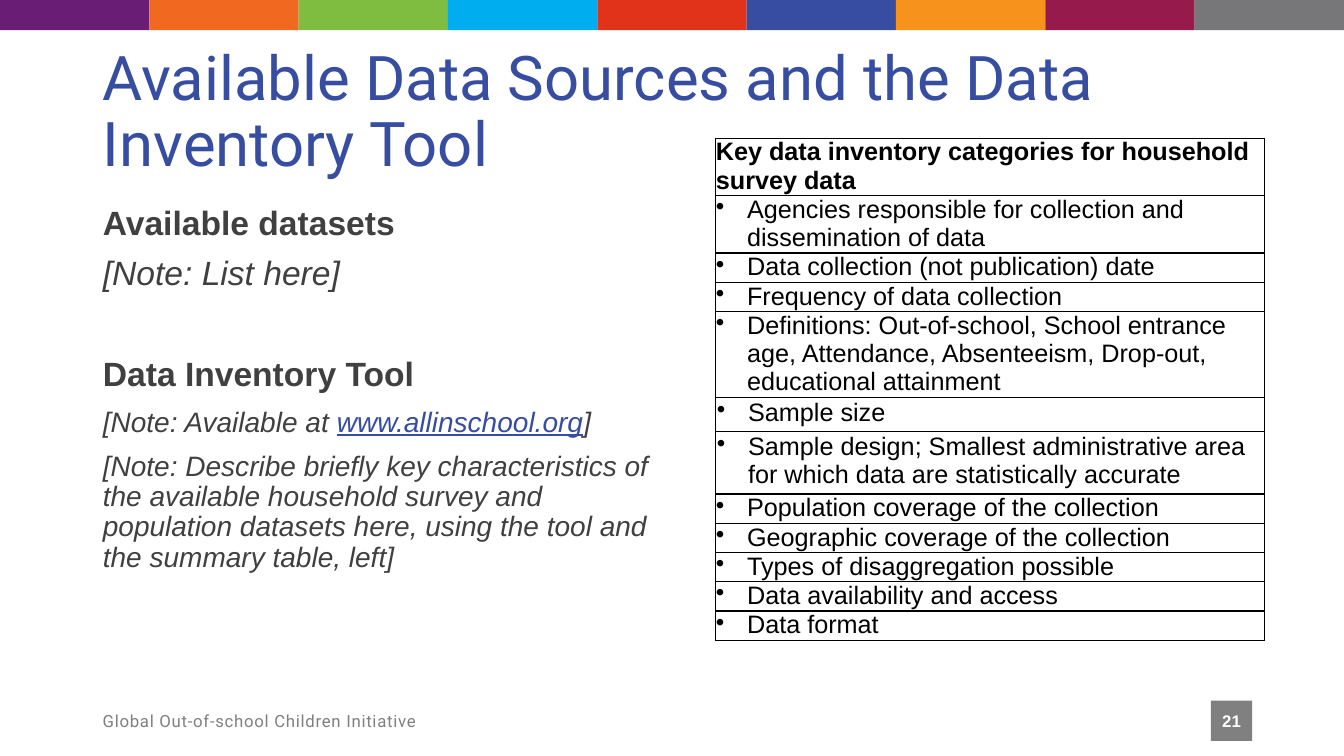
from pptx import Presentation
from pptx.dml.color import RGBColor
from pptx.enum import shapes, text
from pptx.oxml import parse_xml
from pptx.oxml.ns import nsdecls
from pptx.util import Inches, Pt

BLUE = RGBColor(0x36, 0x4D, 0xA1)
DARK = RGBColor(0x40, 0x40, 0x40)
GREY = RGBColor(0x80, 0x80, 0x80)
BLACK = RGBColor(0, 0, 0)
WHITE = RGBColor(0xFF, 0xFF, 0xFF)
BAND_COLOURS = [RGBColor.from_string(code) for code in (
    "691D74", "F16920", "7FBD41", "00AEEF", "E13319",
    "364DA1", "F7931D", "961A4B", "77777A")]

SLIDE_WIDTH, SLIDE_HEIGHT = 13.33, 7.5
LEFT = 0.92
LINE_HEIGHT = 0.28
TIGHT = (0, 0, 0, 0.01)
PADDED = (0.01, 0.01, 0.01, 0.05)

HEADING = "Key data inventory categories for household survey data"
CATEGORIES = [
    ("Agencies responsible for collection and dissemination of data", 2, TIGHT),
    ("Data collection (not publication) date", 1, TIGHT),
    ("Frequency of data collection", 1, TIGHT),
    ("Definitions: Out-of-school, School entrance age, Attendance, "
     "Absenteeism, Drop-out, educational attainment", 3, TIGHT),
    ("Sample size", 1, PADDED),
    ("Sample design; Smallest administrative area for which data are "
     "statistically accurate", 2, PADDED),
    ("Population coverage of the collection", 1, TIGHT),
    ("Geographic coverage of the collection", 1, TIGHT),
    ("Types of disaggregation possible", 1, TIGHT),
    ("Data availability and access", 1, TIGHT),
    ("Data format", 1, TIGHT),
]


def write(paragraph, words, size=18, font="Arial", colour=BLACK, bold=False,
          italic=False, underline=False, tracking=None):
    run = paragraph.add_run()
    run.text = words
    run.font.name = font
    run.font.size = Pt(size)
    run.font.color.rgb = colour
    run.font.bold = bold
    run.font.italic = italic
    run.font.underline = underline
    if tracking:
        run._r.get_or_add_rPr().set("spc", str(tracking))


def set_bullet(paragraph, indent=0, mark=None):
    properties = paragraph._p.get_or_add_pPr()
    properties.set("marL", str(Inches(indent)))
    properties.set("indent", str(-Inches(indent)))
    tag = f'a:buChar {nsdecls("a")} char="{mark}"' if mark else f'a:buNone {nsdecls("a")}'
    properties.append(parse_xml(f"<{tag}/>"))


def place(shape, left, top, width, height):
    shape.left, shape.top = Inches(left), Inches(top)
    shape.width, shape.height = Inches(width), Inches(height)


def add_block(slide, left, top, width, height, colour):
    block = slide.shapes.add_shape(
        shapes.MSO_SHAPE.RECTANGLE, Inches(left), Inches(top),
        Inches(width), Inches(height))
    block.shadow.inherit = False
    block.fill.solid()
    block.fill.fore_color.rgb = colour
    block.line.fill.background()
    return block


def add_colour_band(slide, left, top, width, height):
    step = width / len(BAND_COLOURS)
    for index, colour in enumerate(BAND_COLOURS):
        add_block(slide, left + index * step, top, step, height, colour)


def add_title(slide, left, top, width, height):
    title = slide.shapes.title
    place(title, left, top, width, height)
    frame = title.text_frame
    frame.auto_size = text.MSO_AUTO_SIZE.NONE
    frame.vertical_anchor = text.MSO_ANCHOR.MIDDLE
    heading = frame.paragraphs[0]
    heading.alignment = text.PP_ALIGN.LEFT
    heading.line_spacing = 0.9
    write(heading, "Available Data Sources and the Data Inventory Tool",
          size=44, font="Roboto", colour=BLUE)


def add_notes(slide, left, top, width, height):
    body = slide.placeholders[1]
    place(body, left, top, width, height)
    frame = body.text_frame
    frame.auto_size = text.MSO_AUTO_SIZE.NONE
    strong = dict(size=24, colour=DARK, bold=True)
    large_note = dict(size=24, colour=DARK, italic=True)
    note = dict(size=20, colour=DARK, italic=True)
    address = dict(note, colour=BLUE, underline=True)
    entries = [
        (0, [("Available datasets", strong)]),
        (10, [("[Note: List here]", large_note)]),
        (46, [("Data Inventory Tool", strong)]),
        (10, [("[Note: Available at ", note), ("www.allinschool.org", address),
              ("]", note)]),
        (10, [("[Note: Describe briefly key characteristics of the available "
               "household survey and population datasets here, using the tool "
               "and the summary table, left]", note)]),
    ]
    for index, (gap, pieces) in enumerate(entries):
        paragraph = frame.add_paragraph() if index else frame.paragraphs[0]
        set_bullet(paragraph)
        paragraph.line_spacing = 0.9
        paragraph.space_before = Pt(gap)
        for words, style in pieces:
            write(paragraph, words, **style)


def format_cell(cell, insets):
    cell.margin_left, cell.margin_top, cell.margin_right, cell.margin_bottom = (
        Inches(inset) for inset in insets)
    properties = cell._tc.get_or_add_tcPr()
    for side in ("lnL", "lnR", "lnT", "lnB"):
        properties.append(parse_xml(
            f'<a:{side} {nsdecls("a")} w="{Pt(1)}"><a:solidFill>'
            f'<a:srgbClr val="{BLACK}"/></a:solidFill></a:{side}>'))
    cell.fill.background()


def add_inventory(slide, left, top, width):
    rows = [(HEADING, 2, TIGHT)] + CATEGORIES
    heights = [lines * LINE_HEIGHT + insets[1] + insets[3]
               for _, lines, insets in rows]
    table = slide.shapes.add_table(
        len(rows), 1, Inches(left), Inches(top), Inches(width),
        Inches(sum(heights))).table
    table.horz_banding = False
    for index, (words, _, insets) in enumerate(rows):
        table.rows[index].height = Inches(heights[index])
        cell = table.cell(index, 0)
        format_cell(cell, insets)
        paragraph = cell.text_frame.paragraphs[0]
        if index:
            set_bullet(paragraph, 0.31, "•")
        write(paragraph, words, bold=index == 0)


def add_footer(slide, left, top, width, height):
    label = slide.shapes.add_textbox(
        Inches(left), Inches(top), Inches(8), Inches(height)).text_frame
    label.word_wrap = True
    label.vertical_anchor = text.MSO_ANCHOR.MIDDLE
    write(label.paragraphs[0], "Global Out-of-school Children Initiative",
          size=12, font="Roboto", colour=GREY, tracking=50)

    badge_width = 0.41
    badge = add_block(slide, left + width - badge_width, top, badge_width,
                      height, GREY).text_frame
    badge.margin_left = badge.margin_right = 0
    badge.vertical_anchor = text.MSO_ANCHOR.MIDDLE
    number = badge.paragraphs[0]
    number.alignment = text.PP_ALIGN.CENTER
    write(number, "21", size=12, colour=WHITE, bold=True)


def main():
    deck = Presentation()
    deck.slide_width, deck.slide_height = Inches(SLIDE_WIDTH), Inches(SLIDE_HEIGHT)
    slide = deck.slides.add_slide(deck.slide_layouts[1])
    add_colour_band(slide, 0, 0, SLIDE_WIDTH, 0.3)
    add_title(slide, LEFT, 0.4, 12.05, 1.45)
    add_notes(slide, LEFT, 2, 5.88, 4.76)
    add_inventory(slide, 7.1, 1.37, 5.44)
    add_footer(slide, LEFT, 6.95, 11.5, 0.4)
    deck.save("out.pptx")


if __name__ == "__main__":
    main()
